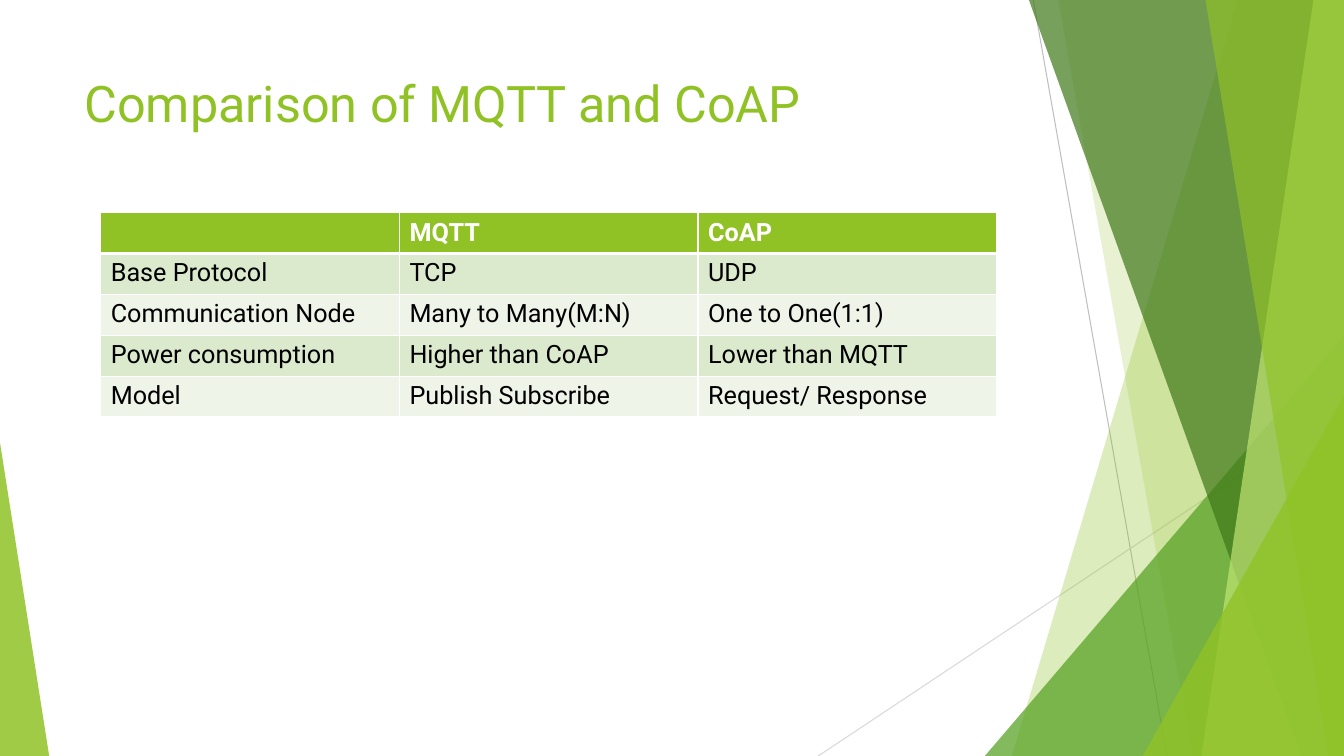
from lxml import etree
from pptx import Presentation, util as u
from pptx.dml import color
from pptx.enum import shapes, text
from pptx.oxml import ns

WIDE, HIGH = 33.87, 19.05
GREEN, WHITE = "90C226", "FFFFFF"


def rgb(code):
    return color.RGBColor.from_string(code)


class Deck:
    font = "Roboto"

    def __init__(self):
        self.show = Presentation()
        self.show.slide_width = u.Cm(WIDE)
        self.show.slide_height = u.Cm(HIGH)
        self.slide = self.show.slides.add_slide(self.show.slide_layouts[6])
        self.items = self.slide.shapes

    def line(self, x1, y1, x2, y2, tint):
        ends = [u.Cm(v) for v in (x1, y1, x2, y2)]
        line = self.items.add_connector(shapes.MSO_CONNECTOR.STRAIGHT, *ends)
        line.line.color.rgb = rgb(tint)
        line.line.width = u.Pt(0.75)
        etree.SubElement(line._element.spPr, ns.qn("a:effectLst"))

    def paint(self, shape, tint, solid):
        shape.shadow.inherit = False
        shape.line.fill.background()
        shape.fill.solid()
        shape.fill.fore_color.rgb = rgb(tint)
        hue = shape._element.spPr.find(".//" + ns.qn("a:srgbClr"))
        etree.SubElement(hue, ns.qn("a:alpha"), val=str(solid * 1000))

    def band(self, top, base, tint, solid):
        pen = self.items.build_freeform(u.Cm(top), 0)
        spots = [(WIDE, 0), (WIDE, HIGH), (base, HIGH)]
        pen.add_line_segments([(u.Cm(x), u.Cm(y)) for x, y in spots])
        self.paint(pen.convert_to_shape(), tint, solid)

    def wedge(self, left, top, wide, peak, tint, solid):
        box = [u.Cm(v) for v in (left, top, wide, HIGH - top)]
        shape = self.items.add_shape(shapes.MSO_SHAPE.ISOSCELES_TRIANGLE, *box)
        shape.adjustments[0] = peak
        self.paint(shape, tint, solid)

    def style(self, frame, size, tint, bold=False):
        for run in frame.paragraphs[0].runs:
            run.font.name = self.font
            run.font.size = u.Pt(size)
            run.font.bold = bold
            run.font.color.rgb = rgb(tint)

    def title(self, words, left, top, wide, high):
        box = self.items.add_textbox(*[u.Cm(v) for v in (left, top, wide, high)])
        frame = box.text_frame
        frame.word_wrap = True
        frame.vertical_anchor = text.MSO_ANCHOR.TOP
        frame.text = words
        self.style(frame, 36, GREEN)

    def edge(self, cell, side, width):
        props = cell._tc.get_or_add_tcPr()
        line = etree.SubElement(props, ns.qn("a:ln" + side), w=str(u.Pt(width)))
        fill = etree.SubElement(line, ns.qn("a:solidFill"))
        etree.SubElement(fill, ns.qn("a:srgbClr"), val=WHITE)

    def table(self, rows, left, top, wide, high):
        box = [u.Cm(v) for v in (left, top, wide, high)]
        grid = self.items.add_table(len(rows), len(rows[0]), *box).table
        for r, row in enumerate(rows):
            head = r == 0
            for c, words in enumerate(row):
                cell = grid.cell(r, c)
                cell.text_frame.text = words
                self.style(cell.text_frame, 18, WHITE if head else "000000", head)
                for side in "LRTB":
                    thick = (r, side) in ((0, "B"), (1, "T"))
                    self.edge(cell, side, 3 if thick else 1)
                cell.fill.solid()
                tint = GREEN if head else ("EEF4E8", "DBE9CD")[r % 2]
                cell.fill.fore_color.rgb = rgb(tint)


def main():
    deck = Deck()
    deck.line(26.04, 0, 29.41, HIGH, "BFBFBF")
    deck.line(WIDE, 10.24, 20.62, HIGH, "D9D9D9")
    deck.band(31.19, 25.5, GREEN, 30)
    deck.band(26.67, 30.05, GREEN, 20)
    deck.wedge(24.82, 8.46, 9.05, 1, "54A021", 72)
    deck.band(25.93, 32.79, "3F7819", 70)
    deck.band(33.1, 30.28, "C0E474", 70)
    deck.band(30.38, 33.48, GREEN, 65)
    deck.wedge(28.8, 9.98, 5.07, 1, GREEN, 80)
    deck.wedge(0, 11.15, 1.24, 0, GREEN, 85)
    deck.title("Comparison of MQTT and CoAP", 1.88, 1.7, 23.88, 3.66)
    deck.table([
        ("", "MQTT", "CoAP"),
        ("Base Protocol", "TCP", "UDP"),
        ("Communication Node", "Many to Many(M:N)", "One to One(1:1)"),
        ("Power consumption", "Higher than CoAP", "Lower than MQTT"),
        ("Model", "Publish Subscribe", "Request/ Response"),
    ], 2.54, 5.36, 22.58, 5.15)
    deck.show.save("out.pptx")


if __name__ == "__main__":
    main()
